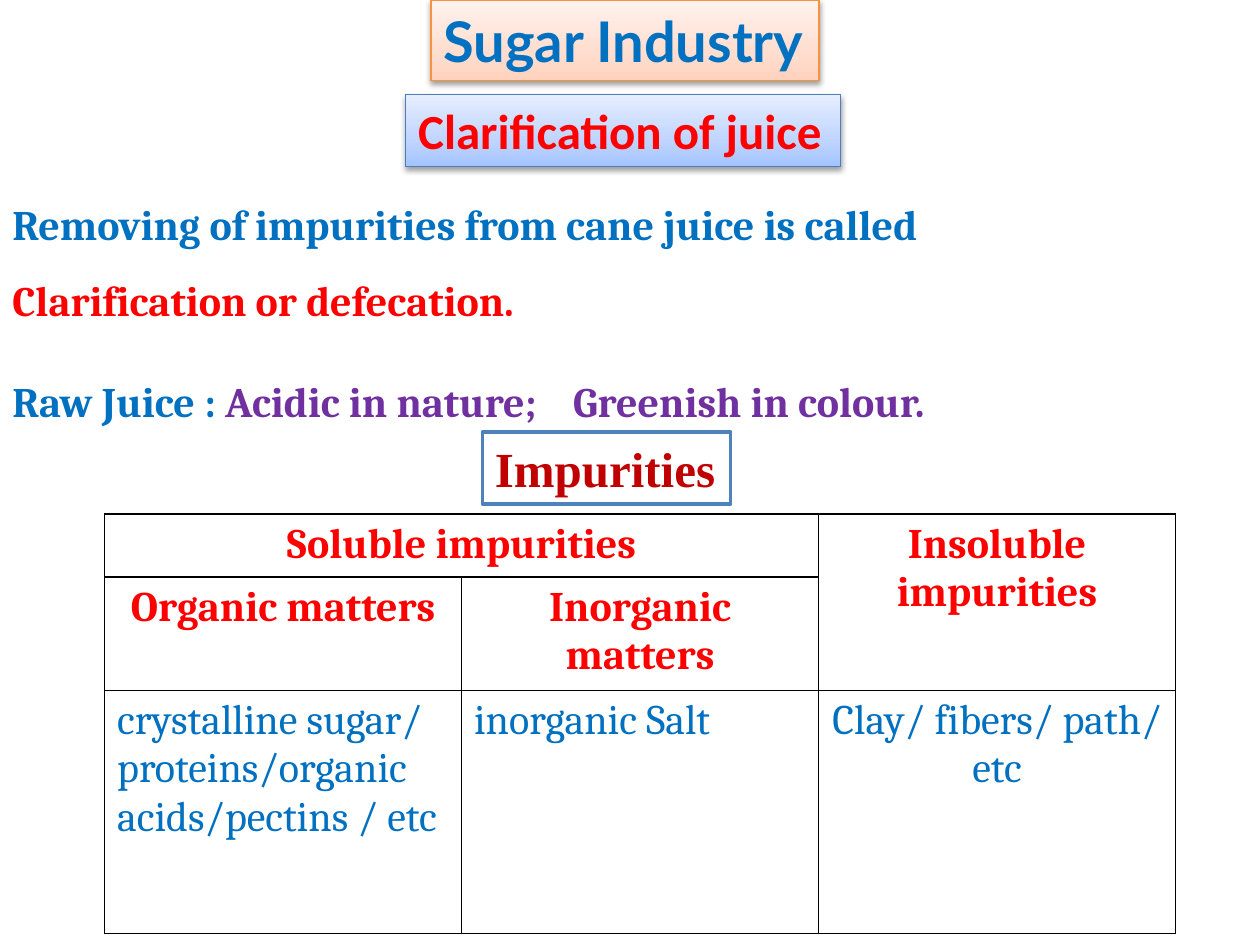
"""Build the sugar industry slide on the clarification of juice."""
from copy import deepcopy

from lxml.etree import SubElement
from pptx import Presentation
from pptx.dml.color import RGBColor
from pptx.enum.shapes import MSO_SHAPE
from pptx.enum.text import MSO_ANCHOR, MSO_AUTO_SIZE, PP_ALIGN
from pptx.oxml import parse_xml
from pptx.oxml.ns import nsdecls, qn
from pptx.util import Inches, Pt

BLUE = RGBColor(0x00, 0x70, 0xC0)
RED = RGBColor(0xFF, 0x00, 0x00)
DARK_RED = RGBColor(0xC0, 0x00, 0x00)
PURPLE = RGBColor(0x70, 0x30, 0xA0)
WHITE = RGBColor(0xFF, 0xFF, 0xFF)
ORANGE_LINE = RGBColor(0xF6, 0x92, 0x40)
BLUE_LINE = RGBColor(0x4B, 0x7E, 0xBC)
FRAME_LINE = RGBColor(0x4F, 0x81, 0xBD)
ORANGE_FADE = ((0, RGBColor(0xFF, 0xD2, 0xBD)), (0.35, RGBColor(0xFF, 0xDE, 0xD0)),
               (1, RGBColor(0xFF, 0xF2, 0xED)))
BLUE_FADE = ((0, RGBColor(0xA4, 0xC4, 0xFF)), (0.35, RGBColor(0xBF, 0xD4, 0xFF)),
             (1, RGBColor(0xE6, 0xEE, 0xFF)))


def add_span(para, text, size=24, font="Cambria", color=BLUE, bold=True):
    span = para.add_run()
    span.text = text
    span.font.size = Pt(size)
    span.font.name = font
    span.font.bold = bold
    span.font.color.rgb = color


class SlideBuilder:
    def __init__(self, page, border_width=1):
        self.page = page
        self.border_width = border_width

    def heading(self, text, bounds, line, line_width=0.75, fade=None, **style):
        box = self.page.shapes.add_shape(MSO_SHAPE.RECTANGLE, *map(Inches, bounds))
        box.shadow.inherit = False
        box.line.color.rgb = line
        box.line.width = Pt(line_width)
        if fade:
            self.fade(box, fade)
            self.shadow(box)
        else:
            box.fill.solid()
            box.fill.fore_color.rgb = WHITE
        frame = box.text_frame
        frame.word_wrap = False
        frame.auto_size = MSO_AUTO_SIZE.SHAPE_TO_FIT_TEXT
        frame.vertical_anchor = MSO_ANCHOR.TOP
        para = frame.paragraphs[0]
        para.alignment = PP_ALIGN.LEFT
        add_span(para, text, **style)

    def fade(self, box, colors):
        box.fill.gradient()
        box.fill.gradient_angle = 90
        stop_list = box._element.spPr.find(qn("a:gradFill")).find(qn("a:gsLst"))
        stop_list.append(deepcopy(stop_list[0]))
        for stop, (position, color) in zip(box.fill.gradient_stops, colors):
            stop.position = position
            stop.color.rgb = color

    def shadow(self, box):
        effects = box._element.spPr.find(qn("a:effectLst"))
        effects.append(parse_xml(
            f'<a:outerShdw {nsdecls("a")} blurRad="{Pt(3.1)}" dist="{Pt(1.6)}" '
            'dir="5400000" rotWithShape="0"><a:srgbClr val="000000">'
            '<a:alpha val="38000"/></a:srgbClr></a:outerShdw>'))

    def body(self, lines, bounds, tab):
        frame = self.page.shapes.add_textbox(*map(Inches, bounds)).text_frame
        frame.word_wrap = True
        frame.auto_size = MSO_AUTO_SIZE.SHAPE_TO_FIT_TEXT
        for index, (spacing, spans) in enumerate(lines):
            para = frame.add_paragraph() if index else frame.paragraphs[0]
            para.line_spacing = spacing
            for text, color in spans:
                add_span(para, text, color=color)
        tabs = SubElement(para._p.get_or_add_pPr(), qn("a:tabLst"))
        SubElement(tabs, qn("a:tab"), pos=str(Inches(tab)), algn="l")

    def table(self, rows, bounds, heights, merges, header_rows):
        grid = self.page.shapes.add_table(
            len(rows), len(rows[0]), *map(Inches, bounds)).table
        grid.first_row = grid.horz_banding = False
        for row, height in zip(grid.rows, heights):
            row.height = Inches(height)
        for first, last in merges:
            grid.cell(*first).merge(grid.cell(*last))
        for r, row in enumerate(rows):
            for c, text in enumerate(row):
                cell = grid.cell(r, c)
                cell.fill.background()
                self.border(cell)
                if text:
                    header = r < header_rows
                    para = cell.text_frame.paragraphs[0]
                    centred = header or c == len(row) - 1
                    para.alignment = PP_ALIGN.CENTER if centred else PP_ALIGN.LEFT
                    add_span(para, text, color=RED if header else BLUE, bold=header)

    def border(self, cell):
        properties = cell._tc.get_or_add_tcPr()
        for index, side in enumerate("LRTB"):
            properties.insert(index, parse_xml(
                f'<a:ln{side} {nsdecls("a")} w="{Pt(self.border_width)}"><a:solidFill>'
                f'<a:srgbClr val="000000"/></a:solidFill></a:ln{side}>'))


def main():
    deck = Presentation()
    deck.slide_width, deck.slide_height = Inches(10), Inches(7.5)
    builder = SlideBuilder(deck.slides.add_slide(deck.slide_layouts[6]))

    builder.heading("Sugar Industry", (3.42, 0, 3.08, 0.64), ORANGE_LINE,
                    fade=ORANGE_FADE, size=32, font="Lato")
    builder.heading("Clarification of juice", (3.22, 0.75, 3.45, 0.57), BLUE_LINE,
                    fade=BLUE_FADE, size=28, font="Calibri", color=RED)
    builder.body([
        (1.5, [("Removing of impurities from cane juice is called", BLUE)]),
        (1.5, [("Clarification or defecation.", RED)]),
        (2.0, [("Raw Juice : ", BLUE),
               ("Acidic in nature;\tGreenish in colour.", PURPLE)]),
    ], (0, 1.33, 10, 2.12), tab=4.45)
    builder.table([
        ("Soluble impurities", "", "Insoluble impurities"),
        ("Organic matters", "Inorganic matters", ""),
        ("crystalline sugar/ proteins/organic acids/pectins / etc",
         "inorganic Salt", "Clay/ fibers/ path/ etc"),
    ], (0.83, 4.08, 8.5, 3.33), heights=(0.5, 0.9, 1.93),
        merges=[((0, 0), (0, 1)), ((0, 2), (1, 2))], header_rows=2)
    builder.heading("Impurities", (3.83, 3.43, 1.97, 0.57), FRAME_LINE, line_width=2,
                    size=28, font="Times New Roman", color=DARK_RED)
    deck.save("out.pptx")


if __name__ == "__main__":
    main()
